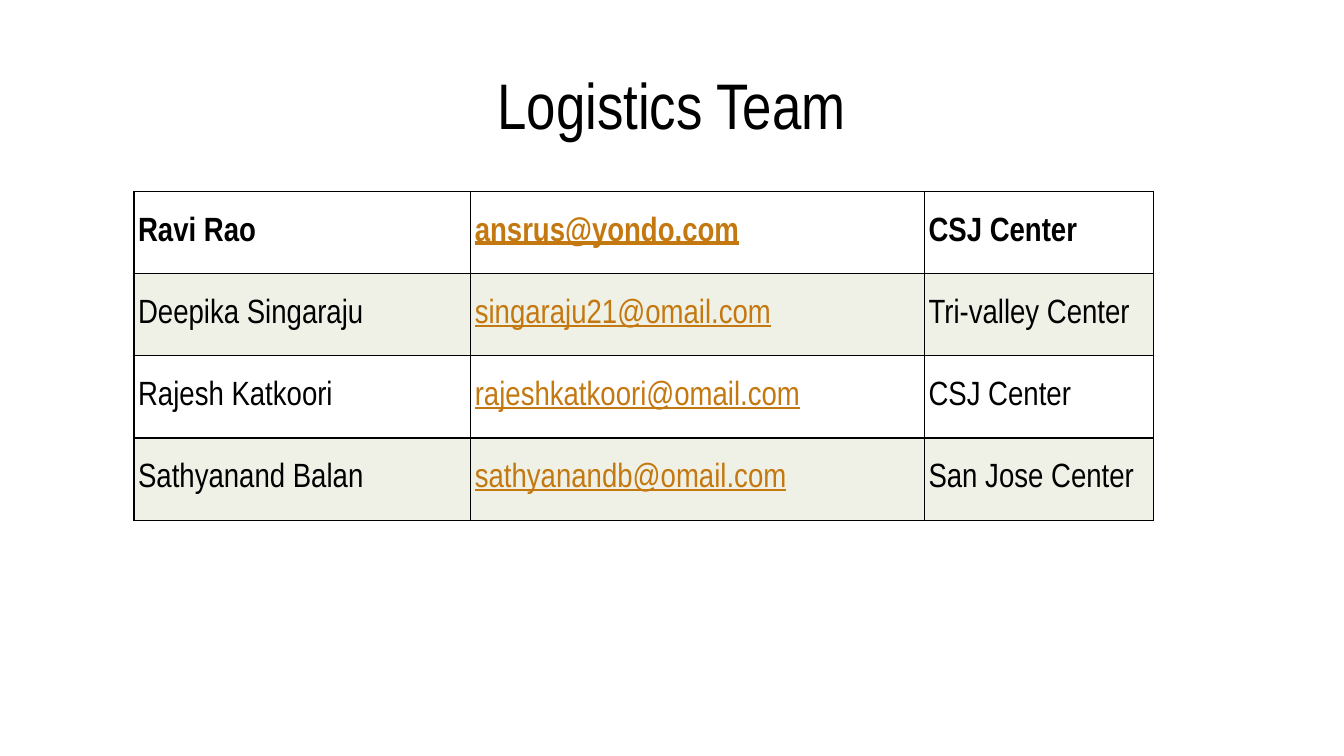
"""Build the Logistics Team slide: a centred title over a contact table."""
from lxml.etree import SubElement
from pptx import Presentation
from pptx.dml.color import RGBColor
from pptx.enum.text import MSO_ANCHOR, PP_ALIGN
from pptx.oxml import parse_xml
from pptx.oxml.ns import nsdecls, qn
from pptx.util import Inches, Pt

TITLE = "Logistics Team"
MEMBERS = [
    ("Ravi Rao", "ansrus@yondo.com", "CSJ Center"),
    ("Deepika Singaraju", "singaraju21@omail.com", "Tri-valley Center"),
    ("Rajesh Katkoori", "rajeshkatkoori@omail.com", "CSJ Center"),
    ("Sathyanand Balan", "sathyanandb@omail.com", "San Jose Center"),
]
COLORS = {"text": "000000", "email": "C47810", "band": "B5BB83", "border": "000000"}
FONT = "Arial Narrow"
BAND_OPACITY = 20
EMAIL_COLUMN = 1
LEFT = 1.33
TITLE_BOX = {"left": LEFT, "top": 0.55, "width": 10.66, "height": 0.95}
TABLE_TOP, TABLE_HEIGHT = 1.9, 3.26
COLUMN_WIDTHS = (3.34, 4.5, 2.27)
CELL_FORMAT = {
    "margin_left": Inches(0.04), "margin_right": Inches(0.04),
    "margin_top": 0, "margin_bottom": 0,
    "vertical_anchor": MSO_ANCHOR.MIDDLE,
}


def apply(target, values):
    for name, value in values.items():
        setattr(target, name, value)


def write(para, text, color, **values):
    span = para.add_run()
    span.text = text
    apply(span.font, {"name": FONT, **values})
    span.font.color.rgb = RGBColor.from_string(COLORS[color])


def draw_borders(cell):
    properties = cell._tc.get_or_add_tcPr()
    for position, side in enumerate(("lnL", "lnR", "lnT", "lnB")):
        properties.insert(position, parse_xml(
            f'<a:{side} {nsdecls("a")} w="{Pt(1)}"><a:solidFill>'
            f'<a:srgbClr val="{COLORS["border"]}"/></a:solidFill></a:{side}>'))


def fill_cell(cell, banded):
    if not banded:
        cell.fill.background()
        return
    cell.fill.solid()
    cell.fill.fore_color.rgb = RGBColor.from_string(COLORS["band"])
    color = cell._tc.tcPr.find(f'{qn("a:solidFill")}/{qn("a:srgbClr")}')
    SubElement(color, qn("a:alpha"), val=str(BAND_OPACITY * 1000))


def add_title(page):
    title = page.shapes.title
    apply(title, {name: Inches(value) for name, value in TITLE_BOX.items()})
    apply(title.text_frame, {"vertical_anchor": MSO_ANCHOR.MIDDLE, "word_wrap": True})
    para = title.text_frame.paragraphs[0]
    para.alignment = PP_ALIGN.CENTER
    write(para, TITLE, "text", size=Pt(46))


def add_contacts(page):
    table = page.shapes.add_table(
        len(MEMBERS), len(COLUMN_WIDTHS), Inches(LEFT), Inches(TABLE_TOP),
        Inches(sum(COLUMN_WIDTHS)), Inches(TABLE_HEIGHT)).table
    apply(table, {"first_row": False, "horz_banding": False})
    for column, width in zip(table.columns, COLUMN_WIDTHS):
        column.width = Inches(width)
    for row, member in enumerate(MEMBERS):
        for column, text in enumerate(member):
            cell = table.cell(row, column)
            apply(cell, CELL_FORMAT)
            fill_cell(cell, banded=row % 2 == 1)
            draw_borders(cell)
            is_email = column == EMAIL_COLUMN
            write(cell.text_frame.paragraphs[0], text, "email" if is_email else "text",
                  size=Pt(24), bold=row == 0, underline=is_email)


def main():
    deck = Presentation()
    apply(deck, {"slide_width": Inches(13.33), "slide_height": Inches(7.5)})
    page = deck.slides.add_slide(deck.slide_layouts.get_by_name("Title Only"))
    add_title(page)
    add_contacts(page)
    deck.save("out.pptx")


if __name__ == "__main__":
    main()
